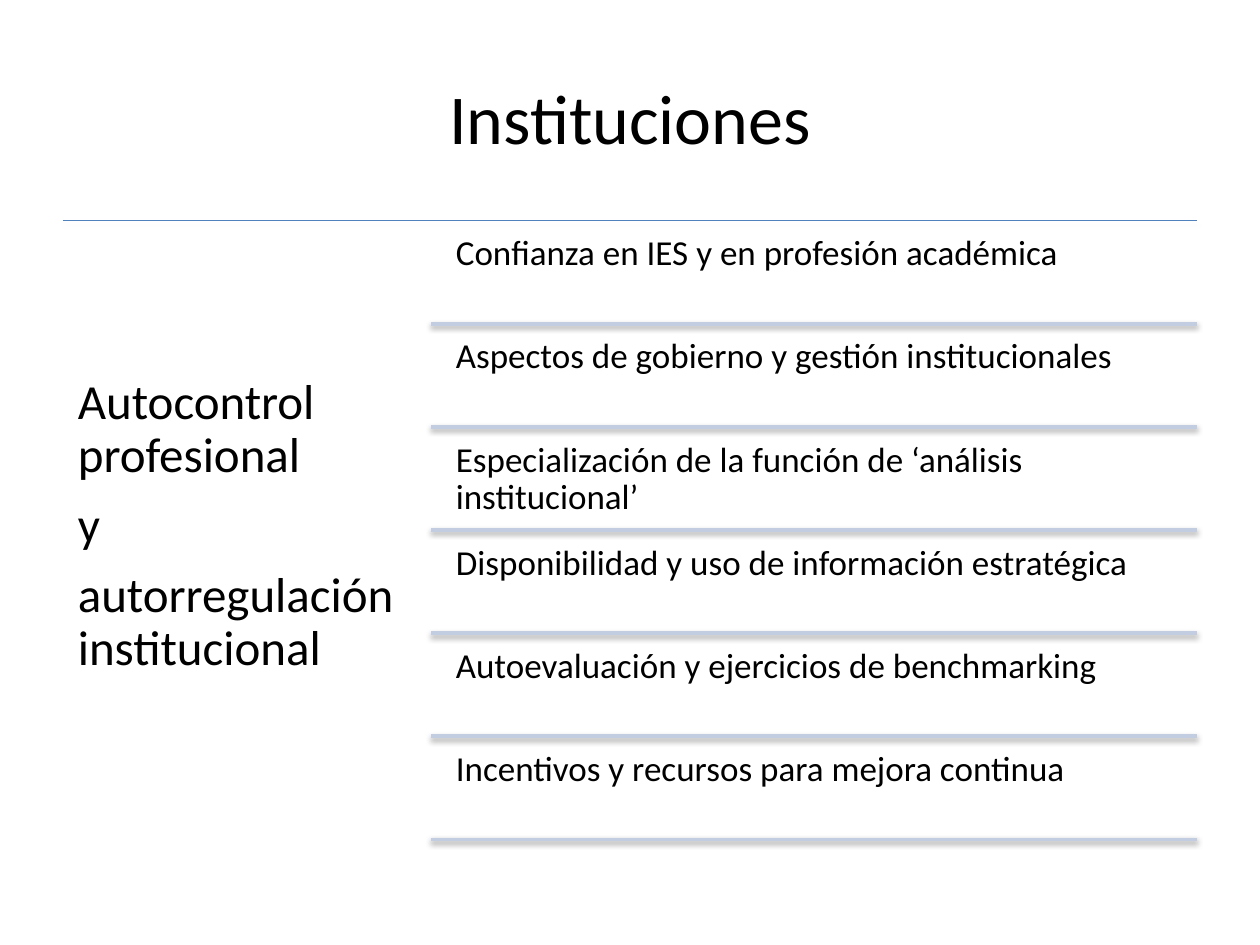
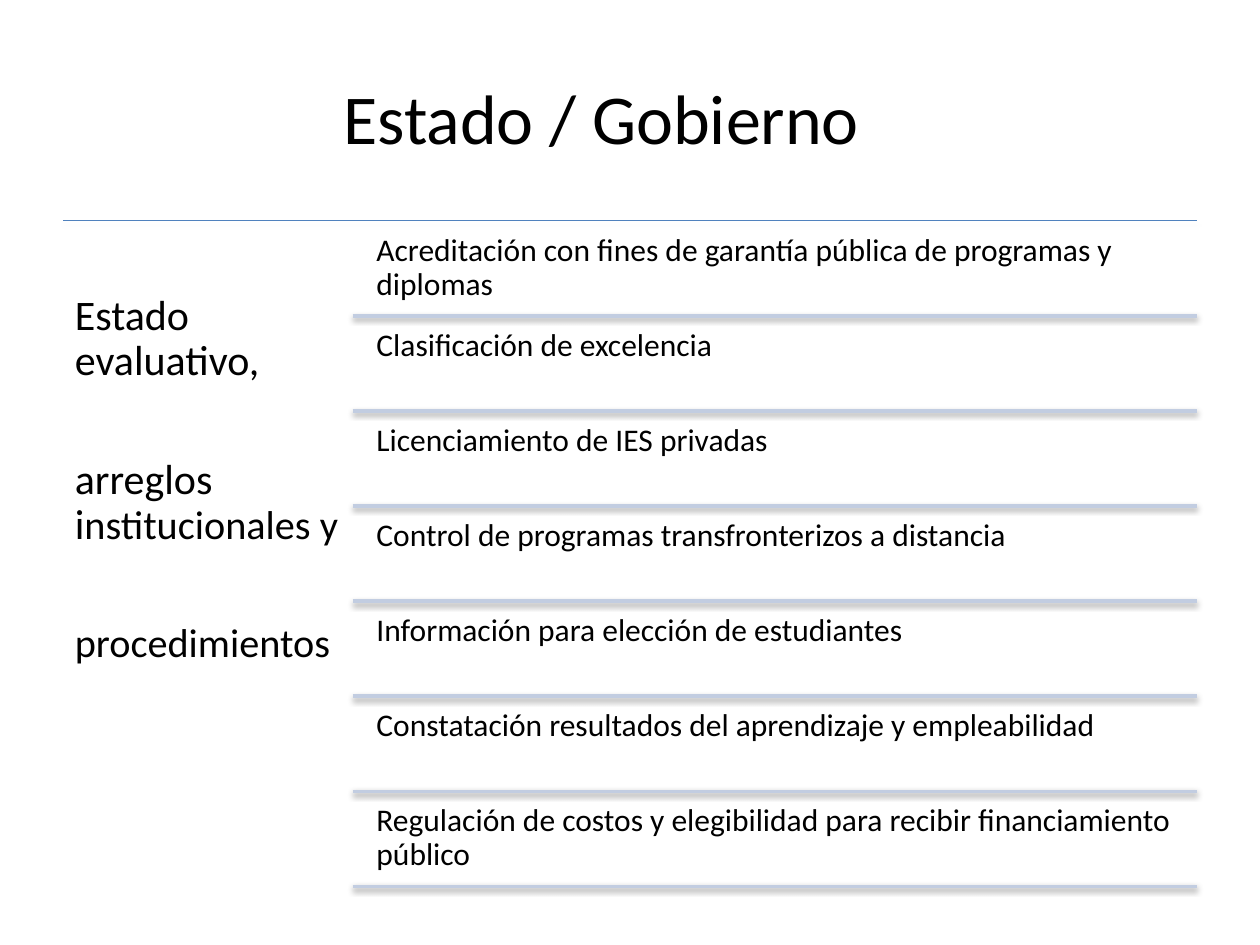
"""Builds two slides that pair a main idea with a ruled list of points."""
from lxml.etree import SubElement
from pptx import Presentation
from pptx.dml.color import RGBColor
from pptx.enum.shapes import MSO_CONNECTOR
from pptx.enum.text import MSO_ANCHOR, PP_ALIGN
from pptx.oxml.ns import qn
from pptx.util import Cm, Pt

COLOURS = {"text": "000000", "top_rule": "4F81BD", "row_rule": "C2CDE1", "shadow": "000000"}
FONT = "Calibri"
LEFT, RIGHT, TOP = 1.27, 24.13, 4.45
ROW_INDENT = 0.3
GAP_SHARE = 0.05


class Deck:
    """Holds the presentation, its style and the current slide."""

    def __init__(self):
        self.presentation = Presentation()
        self.presentation.slide_width = Cm(25.4)
        self.presentation.slide_height = Cm(19.05)
        self.slide = None

    def style(self, font, size):
        font.name = FONT
        font.size = Pt(size)
        font.color.rgb = RGBColor.from_string(COLOURS["text"])

    def start(self, heading, left):
        self.slide = self.presentation.slides.add_slide(self.presentation.slide_layouts[5])
        title = self.slide.shapes.title
        title.left, title.top, title.width, title.height = Cm(left), Cm(0.76), Cm(22.86), Cm(3.18)
        title.text_frame.text = heading
        title.text_frame.vertical_anchor = MSO_ANCHOR.MIDDLE
        paragraph = title.text_frame.paragraphs[0]
        paragraph.alignment = PP_ALIGN.CENTER
        self.style(paragraph.font, 40)

    def rule(self, left, y, colour, width, opacity, distance):
        line = self.slide.shapes.add_connector(
            MSO_CONNECTOR.STRAIGHT, Cm(left), Cm(y), Cm(RIGHT), Cm(y))
        line.line.color.rgb = RGBColor.from_string(COLOURS[colour])
        line.line.width = Pt(width)
        effects = SubElement(line._element.spPr, qn("a:effectLst"))
        shadow = SubElement(effects, qn("a:outerShdw"), blurRad=str(Pt(3.1)),
                            dist=str(Pt(distance)), dir="5400000", rotWithShape="0")
        tint = SubElement(shadow, qn("a:srgbClr"), val=COLOURS["shadow"])
        SubElement(tint, qn("a:alpha"), val=str(opacity * 1000))

    def text(self, left, top, width, height, paragraphs, inset, first_inset=None, space=0):
        """Write paragraphs, each a list of (words, size) runs."""
        box = self.slide.shapes.add_textbox(Cm(left), Cm(top), Cm(width), Cm(height))
        frame = box.text_frame
        frame.word_wrap = True
        frame.margin_left = frame.margin_right = frame.margin_bottom = Cm(inset)
        frame.margin_top = Cm(first_inset or inset)
        for index, runs in enumerate(paragraphs):
            paragraph = frame.add_paragraph() if index else frame.paragraphs[0]
            paragraph.line_spacing = 0.9
            paragraph.space_after = Pt(space)
            self.style(paragraph.font, runs[0][1])
            for words, size in runs:
                run = paragraph.add_run()
                run.text = words
                if size != runs[0][1]:
                    run.font.size = Pt(size)

    def ruled_list(self, idea, idea_width, height, idea_inset, idea_start, idea_space,
                   points, point_size, point_inset):
        self.rule(LEFT, TOP, "top_rule", 0.75, 35, 1.8)
        self.text(LEFT, TOP, idea_width, height, idea, idea_inset, idea_start, idea_space)
        count = len(points)
        row_height = height / (count + GAP_SHARE * (count + 1))
        gap = GAP_SHARE * row_height
        rule_left = LEFT + idea_width
        row_left = rule_left + ROW_INDENT
        for index, point in enumerate(points):
            row_top = TOP + gap + index * (row_height + gap)
            self.text(row_left, row_top, RIGHT - row_left, row_height,
                      [[(point, point_size)]], point_inset)
            self.rule(rule_left, row_top + row_height, "row_rule", 2, 38, 1.6)


def main():
    deck = Deck()

    deck.start("Instituciones", LEFT)
    deck.ruled_list(
        idea=[[("Autocontrol profesional", 28)], [("y", 28)],
              [("autorregulación institucional", 28)]],
        idea_width=7.42, height=12.57, idea_inset=0.3, idea_start=3.16, idea_space=9.8,
        points=[
            "Confianza en IES y en profesión académica",
            "Aspectos de gobierno y gestión institucionales",
            "Especialización de la función de ‘análisis institucional’",
            "Disponibilidad y uso de información estratégica",
            "Autoevaluación y ejercicios de benchmarking",
            "Incentivos y recursos para mejora continua",
        ],
        point_size=20, point_inset=0.2)

    deck.start("Estado / Gobierno", 0.69)
    deck.ruled_list(
        idea=[[("Estado evaluativo,", 24)],
              [("arreglos i", 24), ("nstitucionales y", 23)],
              [("procedimientos", 23)]],
        idea_width=5.84, height=13.51, idea_inset=0.24, idea_start=1.48, idea_space=42,
        points=[
            "Acreditación con fines de garantía pública de programas y diplomas",
            "Clasificación de excelencia",
            "Licenciamiento de IES privadas",
            "Control de programas transfronterizos a distancia",
            "Información para elección de estudiantes",
            "Constatación resultados del aprendizaje y empleabilidad",
            "Regulación de costos y elegibilidad para recibir financiamiento público",
        ],
        point_size=18, point_inset=0.18)

    deck.presentation.save("out.pptx")


if __name__ == "__main__":
    main()
